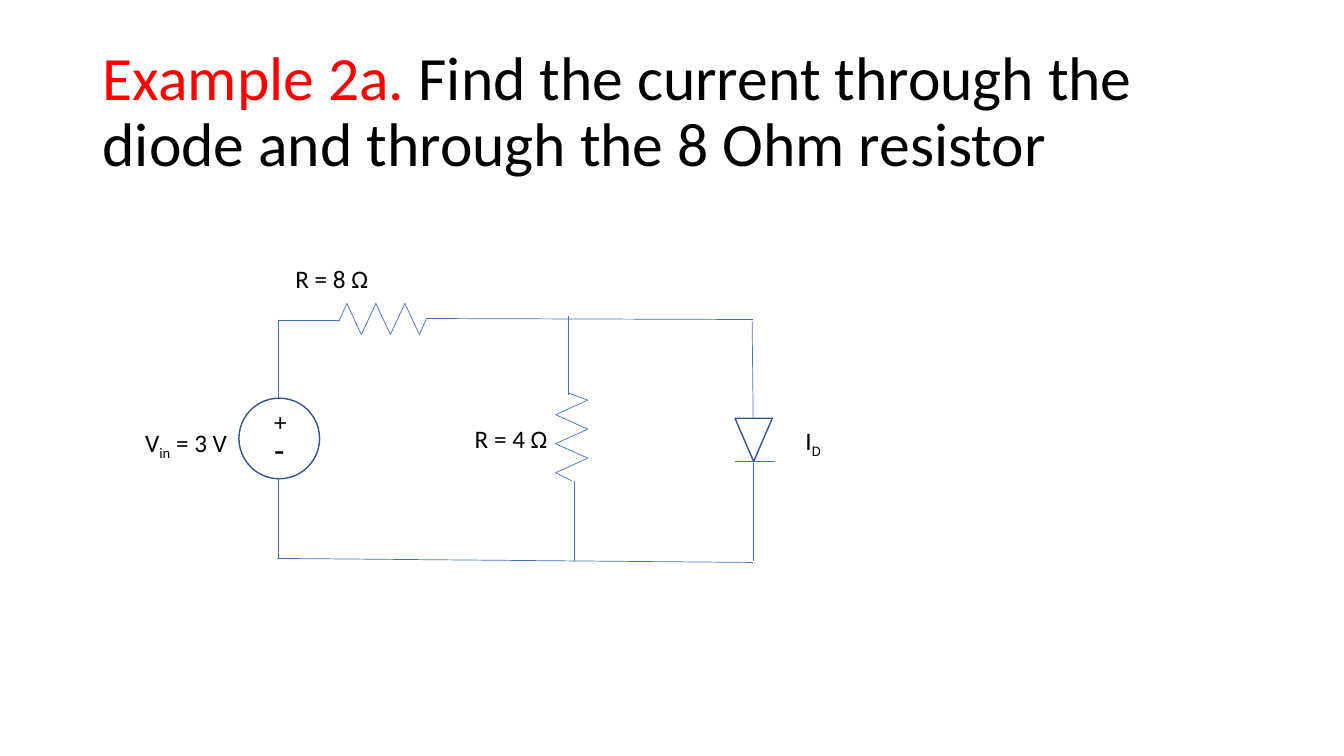
from lxml import etree
from pptx import Presentation
from pptx.dml.color import RGBColor
from pptx.enum import shapes, text
from pptx.oxml import ns
from pptx.util import Inches, Pt

RED = RGBColor(0xFF, 0, 0)
BLACK = RGBColor(0, 0, 0)
WIRE_BLUE = RGBColor(0x44, 0x72, 0xC4)
OUTLINE_BLUE = RGBColor(0x32, 0x54, 0x91)
FONT = "Calibri"
ZIGZAG_STEP = 0.144
ZIGZAG_TURNS = 6


def add_text(page, box, spans, size):
    """Write (text, colour, baseline) spans as one paragraph in a text box."""
    frame = page.shapes.add_textbox(*map(Inches, box)).text_frame
    frame.word_wrap = True
    para = frame.paragraphs[0]
    for words, colour, baseline in spans:
        span = para.add_run()
        span.text = words
        span.font.name = FONT
        span.font.size = Pt(size)
        span.font.color.rgb = colour
        if baseline:
            span.font._element.set("baseline", str(baseline * 1000))
    return frame


def add_title(page, box):
    """Write the two-coloured question, centred vertically in its box."""
    spans = [
        ("Example 2a. ", RED, 0),
        ("Find the current through the diode and through the 8 Ohm resistor", BLACK, 0),
    ]
    frame = add_text(page, box, spans, 44)
    frame.vertical_anchor = text.MSO_ANCHOR.MIDDLE
    frame.paragraphs[0].line_spacing = 0.9


def add_wire(page, origin, points):
    """Join consecutive points, measured from the origin, with thin lines."""
    left, top = origin
    for (x1, y1), (x2, y2) in zip(points, points[1:]):
        ends = (left + x1, top + y1, left + x2, top + y2)
        wire = page.shapes.add_connector(shapes.MSO_CONNECTOR.STRAIGHT, *map(Inches, ends))
        wire.line.color.rgb = WIRE_BLUE
        wire.line.width = Pt(0.5)
        etree.SubElement(wire._element.spPr, ns.qn("a:effectLst"))


def add_outline(page, kind, box):
    """Draw an unfilled component symbol."""
    symbol = page.shapes.add_shape(kind, *map(Inches, box))
    symbol.shadow.inherit = False
    symbol.fill.background()
    symbol.line.color.rgb = OUTLINE_BLUE
    symbol.line.width = Pt(1)
    return symbol


def zigzag(first, sides):
    """Return the turns of a resistor as (along, across) pairs."""
    return [(first + i * ZIGZAG_STEP, sides[i % 2]) for i in range(ZIGZAG_TURNS)]


def add_circuit(page, origin):
    """Draw the circuit and its labels around its top left corner."""
    left, top = origin
    add_outline(page, shapes.MSO_SHAPE.OVAL, (left - 0.39, top + 0.78, 0.8, 0.8))
    diode = add_outline(page, shapes.MSO_SHAPE.ISOSCELES_TRIANGLE,
                        (left + 4.53, top + 0.98, 0.37, 0.43))
    diode._element.spPr.xfrm.set("flipV", "1")

    series_turns = zigzag(0.68, (-0.16, 0.15))
    shunt_turns = [(x, y) for y, x in zigzag(0.8, (3.07, 2.75))]
    wires = [
        [(0, 0), (0, 0.78)],
        [(0, 1.58), (0, 2.37)],
        [(0, 0.01), (0.6, 0.01)],
        [(0.6, 0.02), *series_turns, (1.47, -0.01), (4.71, 0)],
        [(-0.01, 2.37), (4.71, 2.41)],
        [(4.7, 0.02), (4.71, 0.98)],
        [(4.71, 1.41), (4.71, 2.4)],
        [(4.53, 1.41), (4.93, 1.41)],
        [(2.88, -0.03), (2.88, 0.75)],
        [(2.88, 0.73), *shunt_turns, (2.91, 1.6)],
        [(2.94, 1.6), (2.94, 2.4)],
    ]
    for points in wires:
        add_wire(page, origin, points)

    labels = [
        (-0.14, 0.81, 0.36, 0.4, 18, [("+", 0)]),
        (-0.14, 1.04, 0.36, 0.5, 24, [("-", 0)]),
        (-1.42, 1.02, 1.07, 0.4, 18, [("V", 0), ("in", -25), (" = 3 V", 0)]),
        (0.07, -0.61, 1.18, 0.4, 18, [("R = 8 Ω", 0)]),
        (1.85, 0.98, 1.18, 0.4, 18, [("R = 4 Ω", 0)]),
        (5.13, 1, 0.71, 0.4, 18, [("I", 0), ("D", -25)]),
    ]
    for x, y, width, height, size, parts in labels:
        spans = [(words, BLACK, baseline) for words, baseline in parts]
        add_text(page, (left + x, top + y, width, height), spans, size)


def main():
    """Build the slide and save the deck."""
    deck = Presentation()
    deck.slide_width = Inches(13.33)
    deck.slide_height = Inches(7.5)
    page = deck.slides.add_slide(deck.slide_layouts[6])
    add_title(page, (0.92, 0.4, 11.5, 1.45))
    add_circuit(page, (2.76, 3.17))
    deck.save("out.pptx")


if __name__ == "__main__":
    main()
